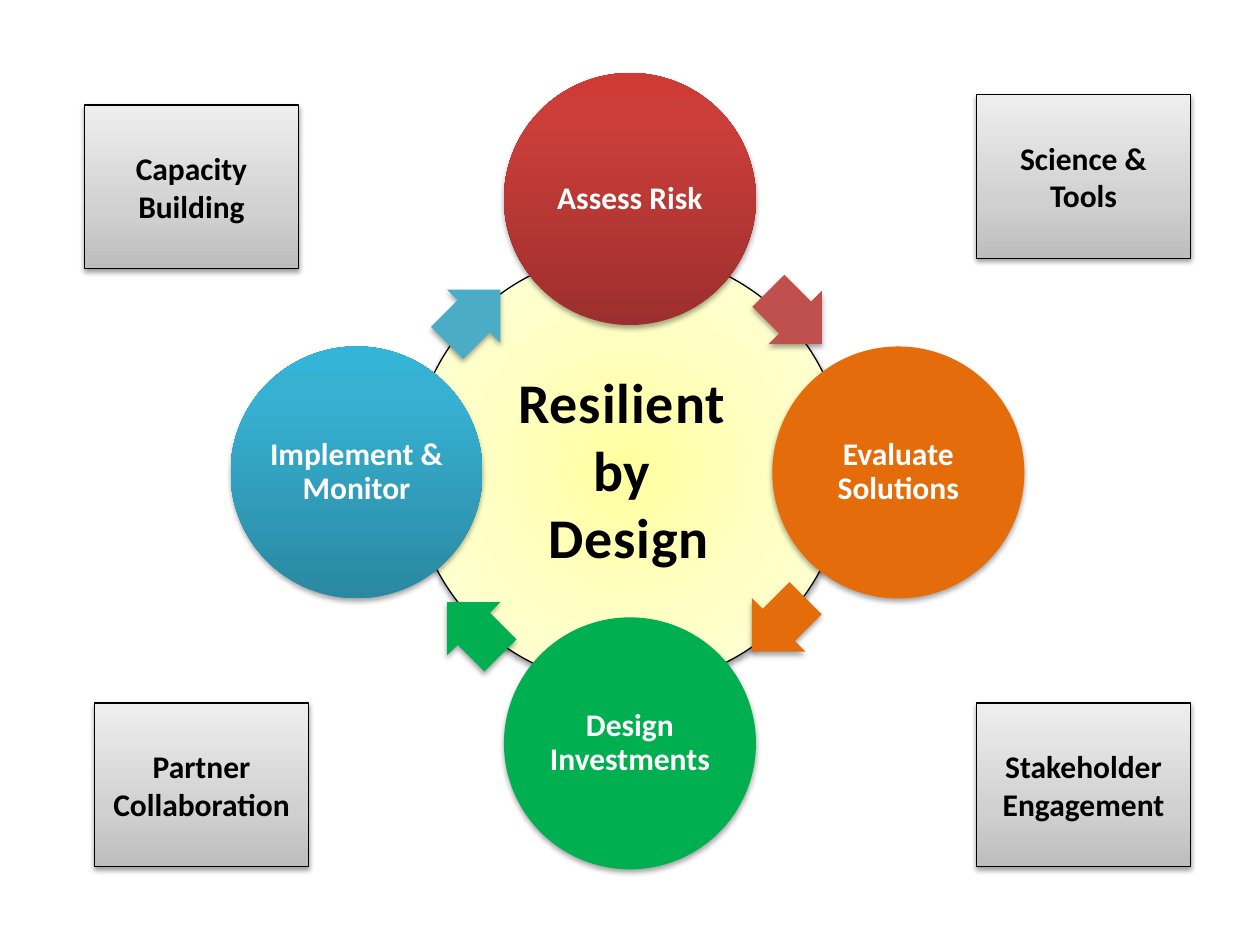
from math import cos, radians, sin

from pptx import Presentation
from pptx.dml.color import RGBColor
from pptx.enum.shapes import MSO_SHAPE as KIND
from pptx.enum.text import MSO_ANCHOR, PP_ALIGN
from pptx.oxml import parse_xml
from pptx.oxml.ns import nsdecls, qn
from pptx.util import Inches, Pt

WIDE, HIGH = 10, 7.5
MID = (WIDE / 2, HIGH / 2)

THEME = dict(
    font="Calibri", body=18, title=32, dark="000000", light="FFFFFF",
    hub=[(0, "FFFFA0"), (50, "FFFFC5"), (100, "FFFFE3")],
    red=[(0, "9C2F2D"), (80, "CB3E3A"), (100, "CE3B37")],
    blue=[(0, "2A88A2"), (80, "37B1D2"), (100, "34B4D6")],
    gray=[(0, "BDBDBD"), (35, "D1D1D1"), (100, "EEEEEE")],
    orange="E46C0A", green="00B050", rose="C0504D", aqua="4BACC6",
)

# Content
TITLE = ["Resilient ", "by ", "Design"]
# Clockwise from the top: label, fill, reach from the centre,
# then fill and centre offset of the arrow that follows
STAGES = [
    ("Assess Risk", "red", 2.17, "rose", (1.31, -1.23)),
    ("Evaluate Solutions", "orange", 2.13, "orange", (1.18, 1.21)),
    ("Design Investments", "green", 2.15, "green", (-1.24, 1.24)),
    ("Implement & Monitor", "blue", 2.17, "aqua", (-1.24, -1.24)),
]
# Label, left and top as shares of the slide
BOXES = [
    ("Science & Tools", 0.775, 0.1),
    ("Capacity Building", 0.067, 0.111),
    ("Stakeholder Engagement", 0.775, 0.744),
    ("Partner Collaboration", 0.075, 0.744),
]
HUB, DISC, ARROW, BOX = 3.44, 2, 0.6, (1.7, 1.3)


def paint(shape, fill, radial=False):
    """Fill with one colour, or with a gradient when given stops."""
    if isinstance(fill, str):
        shape.fill.solid()
        shape.fill.fore_color.rgb = RGBColor.from_string(fill)
        return
    stops = "".join(f'<a:gs pos="{pos * 1000}"><a:srgbClr val="{tone}"/></a:gs>'
                    for pos, tone in fill)
    if radial:
        way = ('<a:path path="circle"><a:fillToRect l="50000" t="50000" '
               'r="50000" b="50000"/></a:path>')
    else:
        way = '<a:lin ang="16200000" scaled="0"/>'
    shape.fill.gradient()
    props = shape.element.spPr
    props.replace(props.find(qn("a:gradFill")), parse_xml(
        f'<a:gradFill {nsdecls("a")} rotWithShape="1">'
        f'<a:gsLst>{stops}</a:gsLst>{way}</a:gradFill>'))


def shade(shape, alpha, drop):
    """Cast a soft shadow straight down."""
    shape.shadow.inherit = False
    shape.element.spPr.find(qn("a:effectLst")).append(parse_xml(
        f'<a:outerShdw {nsdecls("a")} blurRad="{Pt(3.1)}" dist="{Pt(drop)}" '
        f'dir="5400000" rotWithShape="0"><a:srgbClr val="000000">'
        f'<a:alpha val="{alpha * 1000}"/></a:srgbClr></a:outerShdw>'))


def draw(kind, mid, size, fill, edge=False, radial=False):
    """Add a shape by its centre and size."""
    left, top = (m - s / 2 for m, s in zip(mid, size))
    shape = slide.shapes.add_shape(kind, *map(Inches, (left, top, *size)))
    paint(shape, fill, radial)
    if edge:
        shape.line.color.rgb = RGBColor.from_string(THEME["dark"])
        shape.line.width = Pt(0.75)
        shade(shape, 38, 1.6)
    else:
        shape.line.fill.background()
        shade(shape, 35, 1.8)
    return shape


def write(shape, lines, size=THEME["body"], color=THEME["dark"],
          lead=None, track=0, inset=None):
    """Put centred bold lines in a shape."""
    frame = shape.text_frame
    frame.word_wrap = True
    frame.vertical_anchor = MSO_ANCHOR.MIDDLE
    if inset is not None:
        frame.margin_left = frame.margin_right = Inches(inset)
        frame.margin_top = frame.margin_bottom = Inches(inset)
    for i, line in enumerate(lines):
        para = frame.add_paragraph() if i else frame.paragraphs[0]
        para.alignment = PP_ALIGN.CENTER
        if lead:
            para.line_spacing = lead
        run = para.add_run()
        run.text = line
        font = run.font
        font.name, font.size, font.bold = THEME["font"], Pt(size), True
        font.color.rgb = RGBColor.from_string(color)
        if track:
            run._r.get_or_add_rPr().set("spc", str(int(track * 100)))


deck = Presentation()
deck.slide_width, deck.slide_height = Inches(WIDE), Inches(HIGH)
slide = deck.slides.add_slide(deck.slide_layouts[6])

# Hub
hub = draw(KIND.OVAL, (MID[0] - 0.01, MID[1] - 0.03), (HUB, HUB),
           THEME["hub"], edge=True, radial=True)
write(hub, TITLE, size=THEME["title"], track=0.5)

# Cycle of stages and arrows
for i, (label, tone, reach, tint, shift) in enumerate(STAGES):
    turn = radians(90 * i)
    spot = (MID[0] + reach * sin(turn), MID[1] - reach * cos(turn))
    disc = draw(KIND.OVAL, spot, (DISC, DISC), THEME[tone])
    write(disc, [label], color=THEME["light"], lead=0.9, inset=0)

    spot = (MID[0] + shift[0], MID[1] + shift[1])
    arrow = draw(KIND.RIGHT_ARROW, spot, (ARROW, ARROW), THEME[tint])
    arrow.adjustments[0] = 0.6
    arrow.rotation = 45 + 90 * i

# Corner boxes
for label, x, y in BOXES:
    spot = (x * WIDE + BOX[0] / 2, y * HIGH + BOX[1] / 2)
    box = draw(KIND.RECTANGLE, spot, BOX, THEME["gray"], edge=True)
    write(box, [label])

deck.save("out.pptx")
